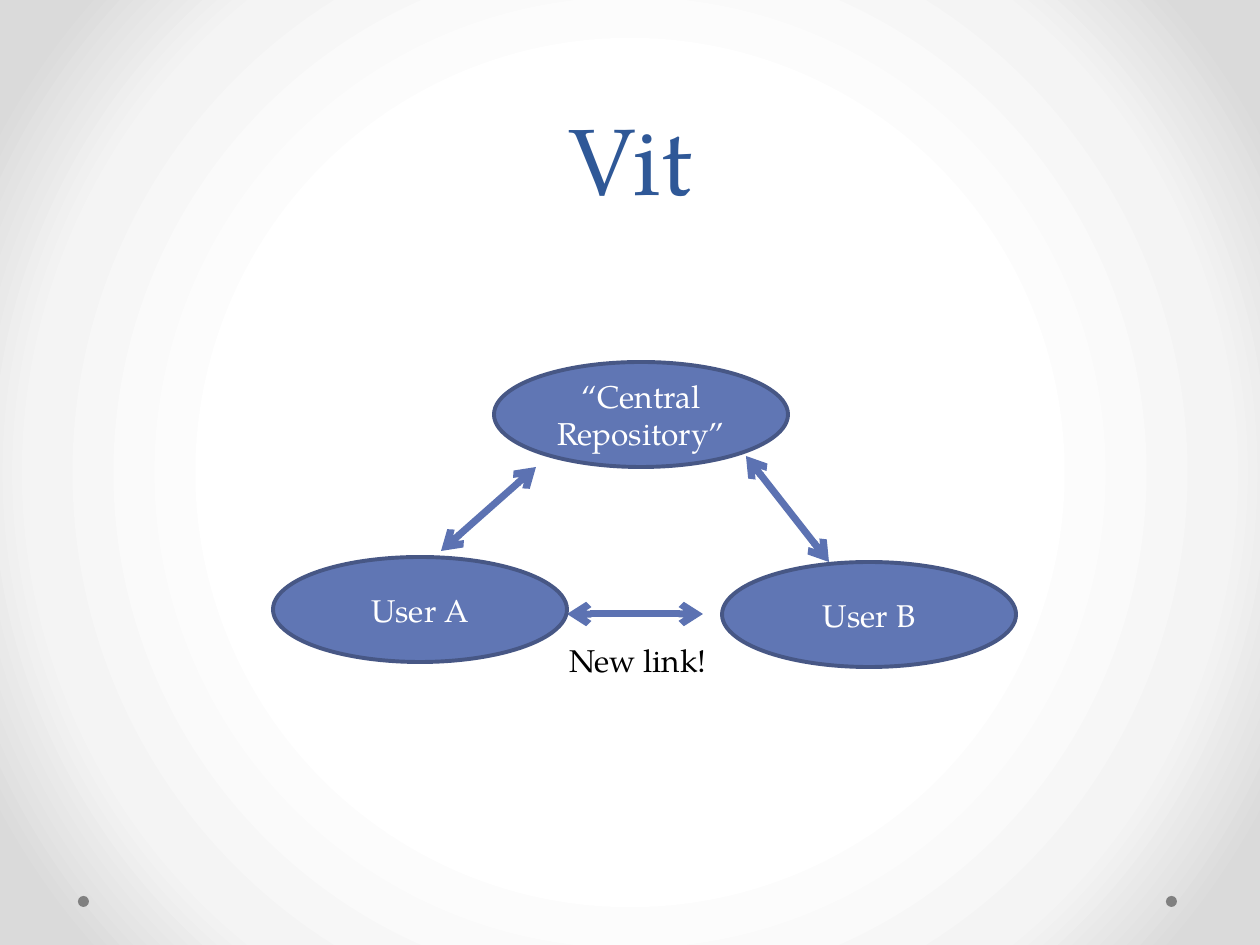
import pptx
import pptx.util
import pptx.dml.color
import pptx.enum.shapes
import pptx.enum.text
import pptx.oxml
import pptx.oxml.ns

FONT = "TeX Gyre Pagella"
PX = 914400 / 126
SHAPE = pptx.enum.shapes.MSO_SHAPE
ALIGN = pptx.enum.text.PP_ALIGN
ANCHOR = pptx.enum.text.MSO_ANCHOR
NS = pptx.oxml.ns.nsdecls("a")

TITLE = "Vit"
BACKDROP = [(50, "FFFFFF"), (76, "F4F4F4"), (92, "DADADA")]
DOTS = [(1166, 896), (78, 896)]
DOT_SIZE = 11
NODES = [("“Central Repository”", 494, 362), ("User B", 722, 562), ("User A", 273, 557)]
NODE_W, NODE_H = 294, 105
LINKS = [(441, 551, 536, 467), (829, 562, 746, 456), (567, 614, 703, 614)]


def emu(*lengths):
    return [pptx.util.Emu(round(n * PX)) for n in lengths]


def rgb(color):
    return pptx.dml.color.RGBColor.from_string(color)


def add_xml(parent, xml):
    parent.append(pptx.oxml.parse_xml(xml))


def write(sp, text, size=18, color="000000", align=ALIGN.LEFT, anchor=ANCHOR.TOP,
          wrap=True, spacing=None):
    tf = sp.text_frame
    tf.word_wrap = wrap
    tf.vertical_anchor = anchor
    p = tf.paragraphs[0]
    p.alignment = align
    if spacing:
        p.line_spacing = pptx.util.Pt(spacing)
    r = p.add_run()
    r.text = text
    r.font.name = FONT
    r.font.size = pptx.util.Pt(size)
    r.font.color.rgb = rgb(color)


def add_ellipse(s, x, y, w, h, fill, line=None):
    sp = s.shapes.add_shape(SHAPE.OVAL, *emu(x, y, w, h))
    sp.shadow.inherit = False
    sp.fill.solid()
    sp.fill.fore_color.rgb = rgb(fill)
    if line:
        sp.line.color.rgb = rgb(line)
        sp.line.width = pptx.util.Pt(2.25)
    else:
        sp.line.fill.background()
    return sp


def add_link(s, ends):
    """Draw a line with an open arrowhead at both ends."""
    link = s.shapes.add_connector(pptx.enum.shapes.MSO_CONNECTOR.STRAIGHT, *emu(*ends))
    link.line.color.rgb = rgb("5C72B2")
    link.line.width = pptx.util.Pt(4)
    ln = link.element.spPr.find(pptx.oxml.ns.qn("a:ln"))
    for end in ("headEnd", "tailEnd"):
        add_xml(ln, f'<a:{end} {NS} type="arrow"/>')
    add_xml(link.element.spPr, f"<a:effectLst {NS}/>")


def add_text(s, box, text, **fmt):
    write(s.shapes.add_textbox(*emu(*box)), text, **fmt)


def set_backdrop(s):
    """Fill the background with a gradient that spreads from the centre."""
    s.background.fill.gradient()
    grad = next(s.element.iter(pptx.oxml.ns.qn("a:gradFill")))
    for child in list(grad):
        grad.remove(child)
    stops = "".join(f'<a:gs pos="{pos * 1000}"><a:srgbClr val="{color}"/></a:gs>'
                    for pos, color in BACKDROP)
    add_xml(grad, f"<a:gsLst {NS}>{stops}</a:gsLst>")
    add_xml(grad, f'<a:path {NS} path="circle">'
                  '<a:fillToRect l="50000" t="50000" r="50000" b="50000"/></a:path>')


def main():
    prs = pptx.Presentation()
    prs.slide_width, prs.slide_height = emu(1260, 945)
    s = prs.slides.add_slide(prs.slide_layouts[6])
    set_backdrop(s)
    for x, y in DOTS:
        add_ellipse(s, x, y, DOT_SIZE, DOT_SIZE, "808080")
    add_text(s, (63, 0, 1134, 221), TITLE, size=54, color="2F5897",
             align=ALIGN.CENTER, anchor=ANCHOR.BOTTOM, spacing=58)
    for ends in LINKS:
        add_link(s, ends)
    add_text(s, (557, 635, 165, 50), "New link!", wrap=False)
    for name, x, y in NODES:
        sp = add_ellipse(s, x, y, NODE_W, NODE_H, "6076B4", line="475785")
        write(sp, name, color="FFFFFF", align=ALIGN.CENTER, anchor=ANCHOR.MIDDLE)
    prs.save("out.pptx")


if __name__ == "__main__":
    main()
